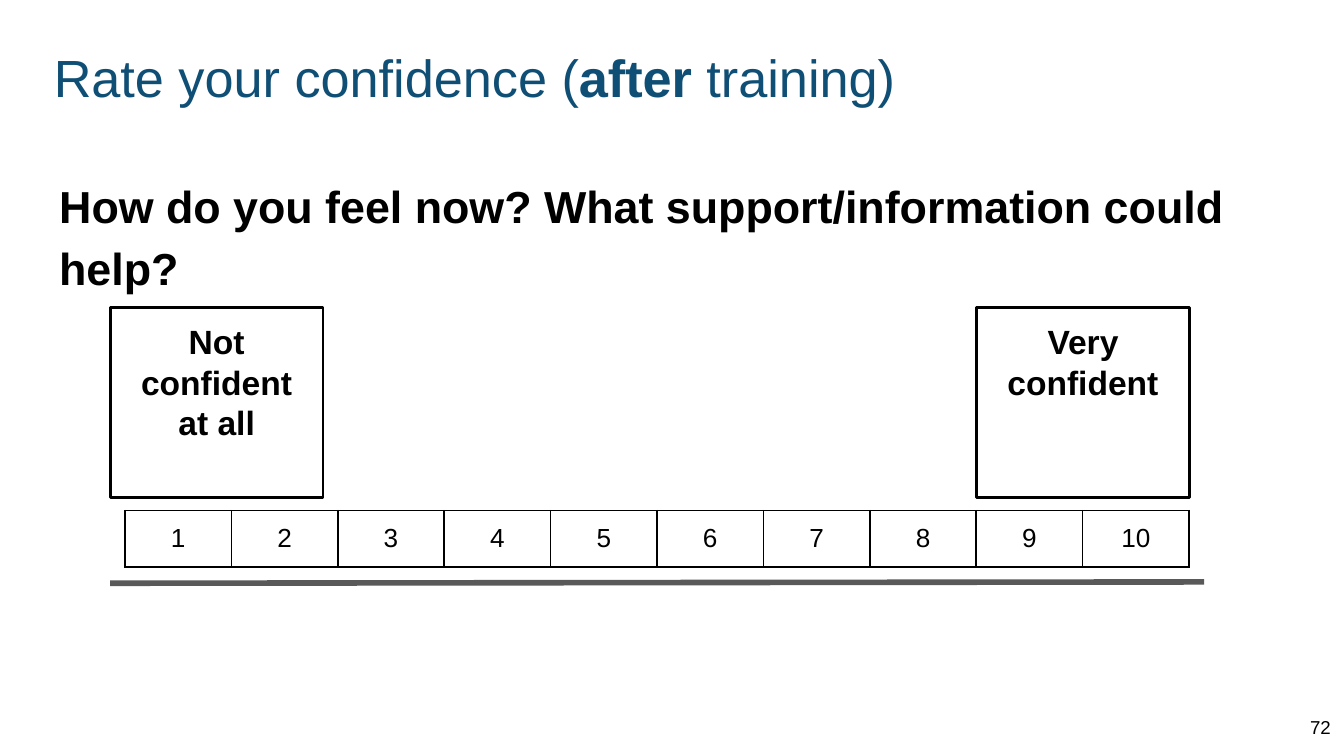
from lxml.etree import SubElement
from pptx import Presentation
from pptx.dml.color import RGBColor
from pptx.enum.shapes import MSO_CONNECTOR as Connector, MSO_SHAPE as Shape
from pptx.enum.text import MSO_ANCHOR as Anchor, MSO_AUTO_SIZE as AutoSize, PP_ALIGN as Align
from pptx.oxml.ns import qn
from pptx.util import Inches, Pt

THEME = {
    "font": "Arial",
    "title": {"size": Pt(28), "color": "104F75"},
    "question": {"size": Pt(24), "color": "000000"},
    "label": {"size": Pt(18), "color": "000000"},
    "score": {"size": Pt(14), "color": "000000"},
    "number": {"size": Pt(10), "color": "000000"},
    "border": "000000",
    "rule": "595959",
}
PAGE_WIDTH, PAGE_HEIGHT = Inches(10), Inches(10 * 9 / 16)
SCORES = 10
SCALE_LEFT, SCALE_TOP, SCALE_WIDTH = Inches(0.93), Inches(3.8), Inches(7.92)
COLUMN, ROW = SCALE_WIDTH // SCORES, Inches(0.42)
EDGE = Inches(0.82)
MARGIN = Inches(0.1)
SIDES = ("left", "right", "top", "bottom")


def add_spans(para, spans, style, align):
    """Add (text, bold) spans to a paragraph in a theme style."""
    para.alignment = align
    for text, bold in spans:
        span = para.add_run()
        span.text = text
        for name, value in {"name": THEME["font"], "size": THEME[style]["size"], "bold": bold}.items():
            setattr(span.font, name, value)
        span.font.color.rgb = RGBColor.from_string(THEME[style]["color"])


def write(box, spans, style, align=Align.LEFT, anchor=Anchor.TOP):
    """Fill a box with one paragraph, with fixed size and even margins."""
    frame = box.text_frame
    settings = {"word_wrap": True, "auto_size": AutoSize.NONE, "vertical_anchor": anchor}
    settings |= {f"margin_{side}": MARGIN for side in SIDES}
    for name, value in settings.items():
        setattr(frame, name, value)
    add_spans(frame.paragraphs[0], spans, style, align)


deck = Presentation()
deck.slide_width, deck.slide_height = PAGE_WIDTH, PAGE_HEIGHT
page = deck.slides.add_slide(deck.slide_layouts[1])

# Title and question
title, question = page.placeholders
for box, (left, top, width, height) in ((title, (0.3, 0.24, 9.36, 0.63)),
                                        (question, (0.34, 1.17, 9.32, 3.83))):
    box.left, box.top = Inches(left), Inches(top)
    box.width, box.height = Inches(width), Inches(height)
write(title, [("Rate your confidence (", False), ("after", True), (" training)", False)], "title")
write(question, [("How do you feel now? What support/information could help?", True)], "question")
para = question.text_frame.paragraphs[0]
para.line_spacing, para.space_before = 1.15, Pt(0)
indents = para._p.get_or_add_pPr()
for name in ("marL", "indent"):
    indents.set(name, "0")
SubElement(indents, qn("a:buNone"))

# Rule under the scale
rule = page.shapes.add_connector(Connector.STRAIGHT, EDGE, Inches(4.34), Inches(8.96), Inches(4.33))
rule.line.color.rgb = RGBColor.from_string(THEME["rule"])
rule.line.width = Pt(3)
SubElement(rule._element.spPr, qn("a:effectLst"))

# Labels, two columns wide, over the ends of the scale
for text, left in (("Not confident at all", EDGE),
                   ("Very confident", SCALE_LEFT + (SCORES - 2) * COLUMN)):
    label = page.shapes.add_shape(Shape.RECTANGLE, left, Inches(2.29), 2 * COLUMN, Inches(1.41))
    label.shadow.inherit = False
    label.fill.background()
    label.line.color.rgb = RGBColor.from_string(THEME["border"])
    label.line.width = Pt(1.5)
    write(label, [(text, True)], "label", Align.CENTER)

# Scale
scale = page.shapes.add_table(1, SCORES, SCALE_LEFT, SCALE_TOP, SCALE_WIDTH, ROW).table
scale.first_row = scale.horz_banding = False
for score, cell in enumerate(scale.iter_cells(), start=1):
    for side in SIDES:
        setattr(cell, f"margin_{side}", MARGIN)
    add_spans(cell.text_frame.paragraphs[0], [(str(score), False)], "score", Align.CENTER)
    borders = cell._tc.get_or_add_tcPr()
    for tag in ("a:lnL", "a:lnR", "a:lnT", "a:lnB"):
        line = SubElement(borders, qn(tag), w=str(Pt(1)))
        SubElement(SubElement(line, qn("a:solidFill")), qn("a:srgbClr"), val=THEME["border"])
    cell.fill.background()

# Page number in the bottom right corner
width, height = Inches(0.6), Inches(0.43)
number = page.shapes.add_textbox(PAGE_WIDTH - width, PAGE_HEIGHT - height, width, height)
write(number, [("72", False)], "number", Align.RIGHT, Anchor.MIDDLE)

deck.save("out.pptx")
